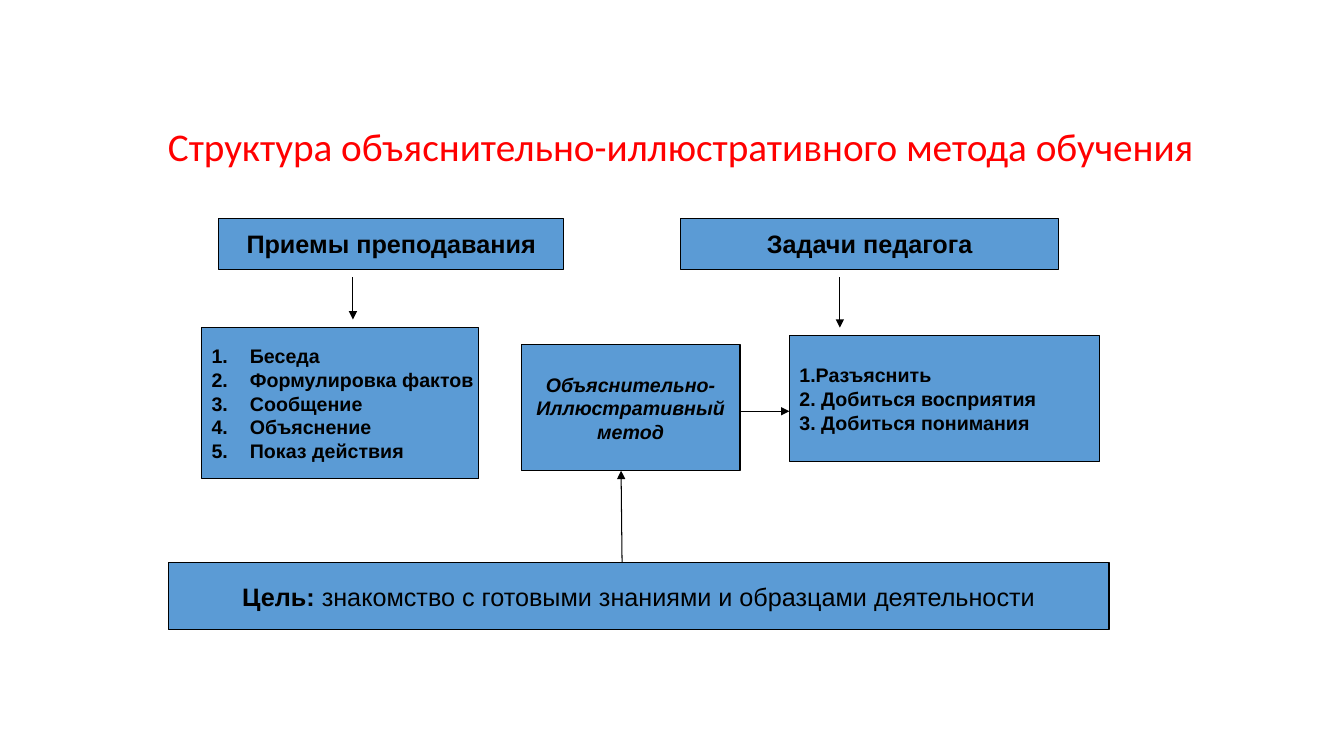
"""Build a slide on the structure of the explanatory teaching method."""
from lxml.etree import SubElement
from pptx import Presentation
from pptx.dml.color import RGBColor
from pptx.enum.shapes import MSO_CONNECTOR, MSO_SHAPE
from pptx.enum.text import MSO_ANCHOR, PP_ALIGN
from pptx.oxml.ns import qn
from pptx.util import Inches, Pt

RED = RGBColor(0xFF, 0x00, 0x00)
BLUE = RGBColor(0x5B, 0x9B, 0xD5)
BLACK = RGBColor(0x00, 0x00, 0x00)
MID, LEFT = PP_ALIGN.CENTER, PP_ALIGN.LEFT

TITLE = "Структура объяснительно-иллюстративного метода обучения"
HEAD = {"size": Pt(18), "bold": True}
ITEM = {"size": Pt(14), "bold": True}
CORE = {**ITEM, "italic": True}
GOAL = {"size": Pt(18), "bold": False}

BOXES = [
    ((2.17, 2.17, 3.42, 0.5), MID, HEAD, False, ["Приемы преподавания"]),
    ((6.75, 2.17, 3.75, 0.5), MID, HEAD, False, ["Задачи педагога"]),
    ((2, 3.25, 2.75, 1.5), LEFT, ITEM, True,
     ["Беседа", "Формулировка фактов", "Сообщение", "Объяснение",
      "Показ действия"]),
    ((5.17, 3.42, 2.17, 1.25), MID, CORE, False,
     ["Объяснительно-", "Иллюстративный", "метод"]),
    ((7.83, 3.33, 3.08, 1.25), LEFT, ITEM, False,
     ["1.Разъяснить", "2. Добиться восприятия", "3. Добиться понимания"]),
    ((1.67, 5.58, 9.33, 0.67), MID, GOAL, False,
     [("Цель: ", "знакомство с готовыми знаниями и образцами деятельности")]),
]
ARROWS = [
    (7.33, 4.08, 7.83, 4.08),
    (6.17, 5.58, 6.16, 4.67),
    (3.5, 2.75, 3.5, 3.17),
    (8.33, 2.75, 8.33, 3.25),
]


def style(font, form):
    for key, val in form.items():
        setattr(font, key, val)


def add_run(para, text, form, color=BLACK, name="Arial"):
    run = para.add_run()
    run.text = text
    style(run.font, {**form, "name": name})
    run.font.color.rgb = color
    return run


def number(para):
    props = para._p.get_or_add_pPr()
    indent = Inches(0.38)
    props.set("marL", str(indent))
    props.set("indent", str(-indent))
    SubElement(props, qn("a:buFont"), typeface="+mj-lt")
    SubElement(props, qn("a:buAutoNum"), type="arabicPeriod")


def add_title(slide):
    box = slide.shapes.add_textbox(*map(Inches, (1, 0.75, 11.5, 1.45)))
    frame = box.text_frame
    style(frame, {"word_wrap": True, "vertical_anchor": MSO_ANCHOR.MIDDLE})
    para = frame.paragraphs[0]
    style(para, {"alignment": MID, "line_spacing": 0.9})
    add_run(para, TITLE, {"size": Pt(28)}, RED, "Calibri")


def add_box(slide, place, align, form, listed, lines):
    box = slide.shapes.add_shape(MSO_SHAPE.RECTANGLE, *map(Inches, place))
    box.shadow.inherit = False
    box.fill.solid()
    box.fill.fore_color.rgb = BLUE
    box.line.color.rgb = BLACK
    box.line.width = Pt(0.75)
    frame = box.text_frame
    style(frame, {"word_wrap": False, "vertical_anchor": MSO_ANCHOR.MIDDLE})
    for row, line in enumerate(lines):
        para = frame.add_paragraph() if row else frame.paragraphs[0]
        para.alignment = align
        if listed:
            number(para)
        if isinstance(line, tuple):
            lead, line = line
            add_run(para, lead, {**form, "bold": True})
        add_run(para, line, form)


def add_arrow(slide, ends):
    arrow = slide.shapes.add_connector(
        MSO_CONNECTOR.STRAIGHT, *map(Inches, ends))
    arrow.line.color.rgb = BLACK
    arrow.line.width = Pt(0.75)
    SubElement(arrow.line._get_or_add_ln(), qn("a:tailEnd"), type="triangle")
    SubElement(arrow._element.spPr, qn("a:effectLst"))


def main():
    deck = Presentation()
    deck.slide_width, deck.slide_height = Inches(13.33), Inches(7.5)
    slide = deck.slides.add_slide(deck.slide_layouts[6])
    add_title(slide)
    for box in BOXES:
        add_box(slide, *box)
    for ends in ARROWS:
        add_arrow(slide, ends)
    deck.save("out.pptx")


if __name__ == "__main__":
    main()
